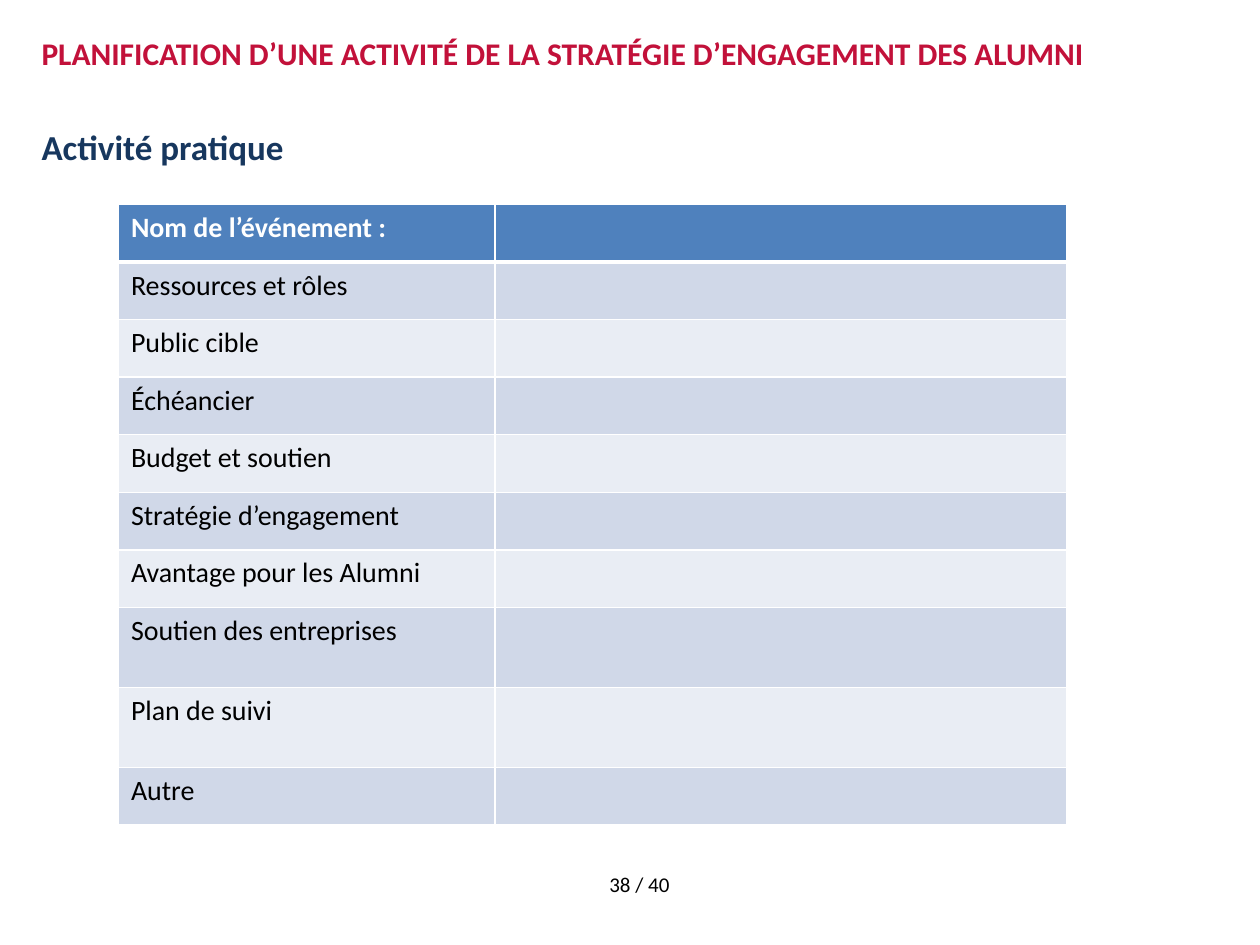
"""Build the alumni activity planning slide with its worksheet table."""
from dataclasses import dataclass

import pptx
import pptx.dml.color
import pptx.enum.shapes
import pptx.enum.text
import pptx.oxml.ns
import pptx.util
from lxml import etree

WIDTH, HEIGHT = pptx.util.Inches(10), pptx.util.Inches(7.5)
FONT = "Calibri"
COLORS = {
    "white": "FFFFFF",
    "black": "000000",
    "red": "C2113A",
    "navy": "17375E",
    "header": "4F81BD",
    "odd": "D0D8E8",
    "even": "E9EDF4",
}
ALIGN = pptx.enum.text.PP_ALIGN
LABEL_COLUMN, ANSWER_COLUMN = 29.9, 45.4
ROW, TALL_ROW = 6.09, 8.48


@dataclass(frozen=True)
class Box:
    """Position and size in percent of the slide."""
    left: float
    top: float
    width: float
    height: float

    def emu(self) -> tuple[int, int, int, int]:
        return x(self.left), y(self.top), x(self.width), y(self.height)


@dataclass(frozen=True)
class Heading:
    """A white banner with one line of bold text."""
    text: str
    box: Box
    size: int
    color: str


@dataclass(frozen=True)
class Row:
    """One worksheet row."""
    label: str
    height: float = ROW


TITLE = Heading("PLANIFICATION D’UNE ACTIVITÉ DE LA STRATÉGIE D’ENGAGEMENT DES ALUMNI",
                Box(3.3, 3.87, 93.3, 10.13), 18, "red")
SUBTITLE = Heading("Activité pratique", Box(3.3, 14, 93.3, 68.13), 20, "navy")
PAGE_BOX = Box(43.8, 91.6, 13.9, 4.13)
ROWS = [
    Row("Nom de l’événement :"),
    Row("Ressources et rôles"),
    Row("Public cible"),
    Row("Échéancier"),
    Row("Budget et soutien"),
    Row("Stratégie d’engagement"),
    Row("Avantage pour les Alumni"),
    Row("Soutien des entreprises", TALL_ROW),
    Row("Plan de suivi", TALL_ROW),
    Row("Autre"),
]


def x(share: float) -> int:
    return round(WIDTH * share / 100)


def y(share: float) -> int:
    return round(HEIGHT * share / 100)


def rgb(name: str) -> pptx.dml.color.RGBColor:
    return pptx.dml.color.RGBColor.from_string(COLORS[name])


def write(tf, text: str, *, size: int, color: str = "black", bold: bool = False,
          align=ALIGN.LEFT, line: int | None = None, after: int = 0) -> None:
    p = tf.paragraphs[0]
    p.alignment = align
    p.space_after = pptx.util.Pt(after)
    if line:
        p.line_spacing = pptx.util.Pt(line)
    r = p.add_run()
    r.text = text
    r.font.name = FONT
    r.font.size = pptx.util.Pt(size)
    r.font.bold = bold
    r.font.color.rgb = rgb(color)


def draw_heading(s, heading: Heading) -> None:
    sp = s.shapes.add_shape(pptx.enum.shapes.MSO_SHAPE.RECTANGLE, *heading.box.emu())
    sp.shadow.inherit = False
    sp.fill.solid()
    sp.fill.fore_color.rgb = rgb("white")
    sp.line.fill.background()
    tf = sp.text_frame
    tf.word_wrap = True
    tf.vertical_anchor = pptx.enum.text.MSO_ANCHOR.TOP
    tf.margin_left = tf.margin_top = tf.margin_right = tf.margin_bottom = 0
    write(tf, heading.text, size=heading.size, color=heading.color, bold=True,
          align=ALIGN.JUSTIFY, line=20, after=12)


def set_borders(cell, top: int, bottom: int) -> None:
    qn = pptx.oxml.ns.qn
    tcPr = cell._tc.get_or_add_tcPr()
    for side, width in (("L", 1), ("R", 1), ("T", top), ("B", bottom)):
        ln = etree.SubElement(tcPr, qn(f"a:ln{side}"), w=str(pptx.util.Pt(width)))
        fill = etree.SubElement(ln, qn("a:solidFill"))
        etree.SubElement(fill, qn("a:srgbClr"), val=COLORS["white"])


def draw_table(s, rows: list[Row], left: float, top: float) -> None:
    box = Box(left, top, LABEL_COLUMN + ANSWER_COLUMN, sum(row.height for row in rows))
    table = s.shapes.add_table(len(rows), 2, *box.emu()).table
    for column, width in zip(table.columns, (LABEL_COLUMN, ANSWER_COLUMN)):
        column.width = x(width)
    for i, row in enumerate(rows):
        header = i == 0
        table.rows[i].height = y(row.height)
        for cell in table.rows[i].cells:
            set_borders(cell, top=3 if i == 1 else 1, bottom=3 if header else 1)
            cell.fill.solid()
            cell.fill.fore_color.rgb = rgb("header" if header else "odd" if i % 2 else "even")
        write(table.cell(i, 0).text_frame, row.label, size=16, bold=header,
              color="white" if header else "black")


def draw_page_number(s, text: str, box: Box) -> None:
    tf = s.shapes.add_textbox(*box.emu()).text_frame
    tf.word_wrap = True
    write(tf, text, size=12, align=ALIGN.CENTER)


def main() -> None:
    prs = pptx.Presentation()
    prs.slide_width, prs.slide_height = WIDTH, HEIGHT
    s = prs.slides.add_slide(prs.slide_layouts[6])
    draw_heading(s, SUBTITLE)
    draw_table(s, ROWS, left=9.4, top=21.65)
    draw_heading(s, TITLE)
    draw_page_number(s, "38 / 40", PAGE_BOX)
    prs.save("out.pptx")


if __name__ == "__main__":
    main()
